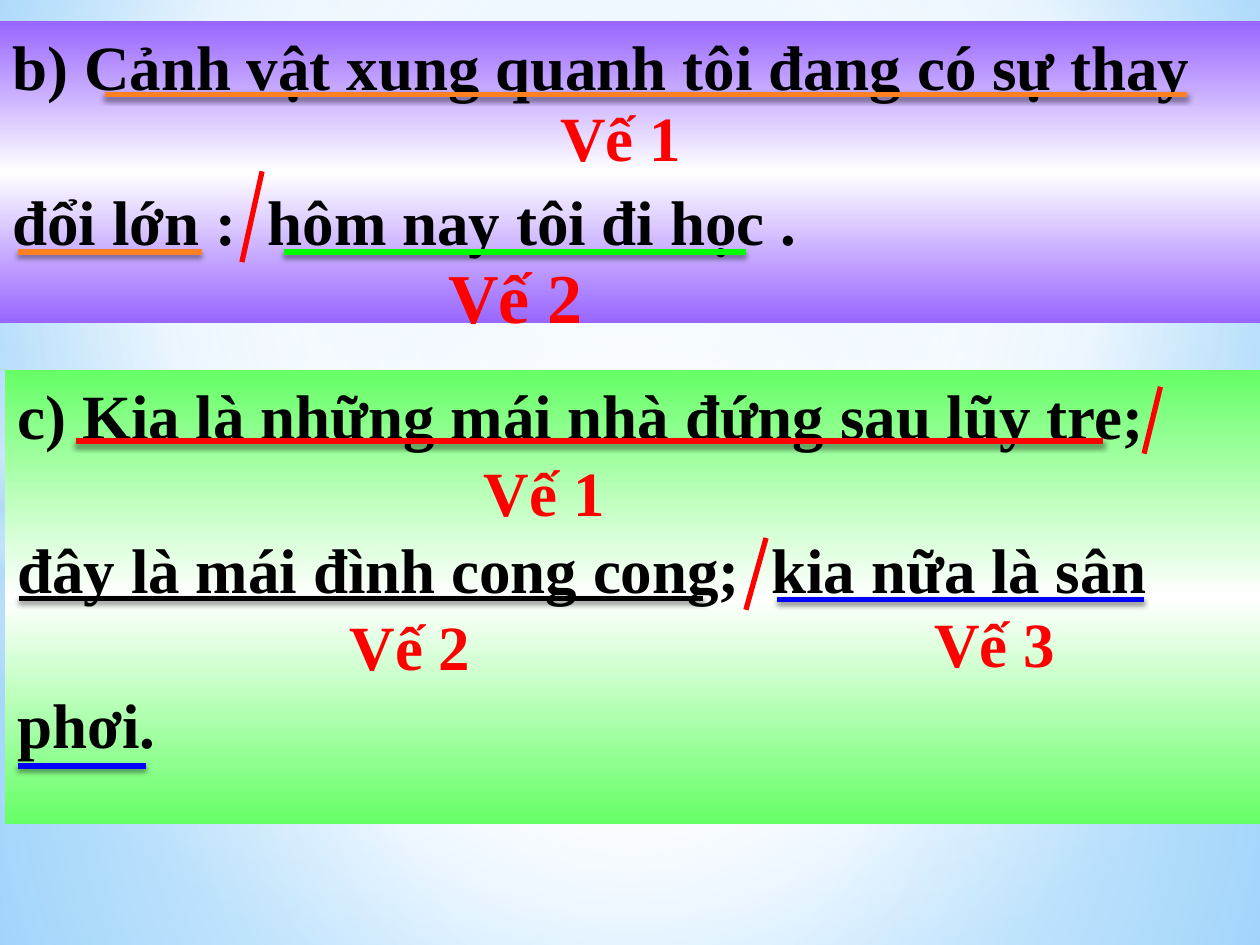
from lxml import etree
from pptx import Presentation
from pptx.dml.color import RGBColor
from pptx.enum.shapes import MSO_CONNECTOR, MSO_SHAPE
from pptx.enum.text import MSO_ANCHOR, PP_ALIGN
from pptx.oxml import parse_xml
from pptx.util import Inches, Pt

RECT, OVAL = MSO_SHAPE.RECTANGLE, MSO_SHAPE.OVAL
STRAIGHT = MSO_CONNECTOR.STRAIGHT
TOP = MSO_ANCHOR.TOP
LEFT, CENTER = PP_ALIGN.LEFT, PP_ALIGN.CENTER

NS = "http://schemas.openxmlformats.org/drawingml/2006/main"
FONT = "Times New Roman"
BLACK = RGBColor(0x00, 0x00, 0x00)
RED = RGBColor(0xFF, 0x00, 0x00)
BLUE = RGBColor(0x00, 0x00, 0xFF)
LIME = RGBColor(0x00, 0xFF, 0x00)
ORANGE = RGBColor(0xFF, 0x80, 0x21)
WHITE = RGBColor(0xFF, 0xFF, 0xFF)
GREEN = RGBColor(0x66, 0xFF, 0x66)
VIOLET = RGBColor(0x99, 0x66, 0xFF)
PALE = RGBColor(0xB4, 0xDC, 0xFA)
SKY = RGBColor(0x9E, 0xD5, 0xFF)
DEEP = RGBColor(0x5B, 0xB9, 0xFF)
MIDDLE = (50, 50, 50, 50)


def make_grad(stops, focus=None):
    """Gradient from (position, colour, opacity) stops: radial with a focus, else downward."""
    marks = "".join(
        f'<a:gs pos="{pos * 1000}"><a:srgbClr val="{color}">'
        f'<a:alpha val="{alpha * 1000}"/></a:srgbClr></a:gs>'
        for pos, color, alpha in stops)
    if focus:
        sides = " ".join(f'{side}="{part * 1000}"' for side, part in zip("ltrb", focus))
        way = f'<a:path path="circle"><a:fillToRect {sides}/></a:path>'
    else:
        way = '<a:lin ang="5400000" scaled="0"/>'
    return parse_xml(f'<a:gradFill xmlns:a="{NS}" rotWithShape="1">'
                     f'<a:gsLst>{marks}</a:gsLst>{way}</a:gradFill>')


def swap_fill(fill, parent, grad):
    fill.solid()
    old = parent.find(f"{{{NS}}}solidFill")
    parent.replace(old, grad)


def add_back(slide):
    fill = slide.background.fill
    fill.solid()
    old = next(slide.element.cSld.iter(f"{{{NS}}}solidFill"))
    stops = [(0, SKY, 100), (60, WHITE, 100), (100, DEEP, 100)]
    old.getparent().replace(old, make_grad(stops, (20, 10, 20, 60)))


def add_panel(slide, kind, box, stops, focus=None):
    panel = slide.shapes.add_shape(kind, *map(Inches, box))
    panel.shadow.inherit = False
    panel.line.fill.background()
    swap_fill(panel.fill, panel._element.spPr, make_grad(stops, focus))
    return panel


def add_text(frame, lines, color, size=36, align=LEFT, gap=0):
    frame.word_wrap = True
    frame.vertical_anchor = TOP
    for index, line in enumerate(lines):
        para = frame.paragraphs[0] if index == 0 else frame.add_paragraph()
        para.alignment = align
        para.space_before = Pt(gap if index else 0)
        run = para.add_run()
        run.text = line
        run.font.name = FONT
        run.font.size = Pt(size)
        run.font.bold = True
        run.font.color.rgb = color


def add_verse(slide, box, color, lines):
    stops = [(0, color, 100), (50, WHITE, 100), (100, color, 100)]
    panel = add_panel(slide, RECT, box, stops)
    add_text(panel.text_frame, lines, BLACK, gap=45)


def add_label(slide, text, box, size=36):
    label = slide.shapes.add_textbox(*map(Inches, box))
    add_text(label.text_frame, [text], RED, size, CENTER)


def add_line(slide, start, end, color, shade=False):
    line = slide.shapes.add_connector(STRAIGHT, *map(Inches, start + end))
    line.line.color.rgb = color
    line.line.width = Pt(3)
    effects = etree.SubElement(line._element.spPr, f"{{{NS}}}effectLst")
    if shade:
        effects.append(parse_xml(
            f'<a:outerShdw xmlns:a="{NS}" blurRad="{Pt(3.1)}" dist="{Pt(1.8)}" '
            'dir="5400000" rotWithShape="0"><a:srgbClr val="000000">'
            '<a:alpha val="45000"/></a:srgbClr></a:outerShdw>'))


def add_glow(slide):
    """Lay the soft light of the backdrop."""
    add_panel(slide, RECT, (0, 4.23, 10, 3.27),
              [(0, WHITE, 91), (37, WHITE, 76), (100, PALE, 79)], MIDDLE)
    add_panel(slide, RECT, (0, 0, 10, 4.23),
              [(0, WHITE, 89), (48, WHITE, 62), (100, PALE, 79)], MIDDLE)
    add_panel(slide, RECT, (0, 2.9, 10, 2.5),
              [(0, WHITE, 0), (29, WHITE, 30), (45, PALE, 40),
               (55, WHITE, 26), (65, PALE, 60), (100, WHITE, 0)])
    add_panel(slide, OVAL, (0, 1.75, 10, 5.58),
              [(0, WHITE, 100), (54, WHITE, 0)], MIDDLE)


def main():
    deck = Presentation()
    deck.slide_width, deck.slide_height = Inches(10), Inches(7.5)
    slide = deck.slides.add_slide(deck.slide_layouts[6])
    add_back(slide)
    add_glow(slide)

    add_verse(slide, (0.04, 2.94, 10, 3.6), GREEN, [
        "c) Kia là những mái nhà đứng sau lũy tre;",
        "đây là mái đình cong cong;  kia nữa là sân",
        "phơi."])
    add_verse(slide, (0, 0.17, 10, 2.39), VIOLET, [
        "b) Cảnh vật xung quanh tôi đang có sự thay",
        "đổi lớn :  hôm nay tôi đi học ."])

    for start, end in [((2.08, 1.36), (1.92, 2.08)),
                       ((9.21, 3.07), (9.08, 3.6)),
                       ((6.08, 4.27), (5.92, 4.84))]:
        add_line(slide, start, end, RED)

    add_label(slide, "Vế 1", (3.92, 0.73, 2.01, 0.71))
    add_label(slide, "Vế 2", (3.15, 1.96, 1.88, 0.77), 40)
    add_label(slide, "Vế 1", (3.52, 3.55, 1.6, 0.71))
    add_label(slide, "Vế 2", (2.35, 4.77, 1.81, 0.71))
    add_label(slide, "Vế 3", (7.04, 4.75, 1.71, 0.71))

    for left, right, top, color in [(0.14, 1.16, 6.08, BLUE),
                                    (0.15, 5.58, 4.75, BLACK),
                                    (6.17, 9.08, 4.76, BLUE),
                                    (0.14, 1.6, 2, ORANGE),
                                    (0.83, 9.42, 0.75, ORANGE),
                                    (2.25, 5.92, 2, LIME),
                                    (0.6, 8.75, 3.5, RED)]:
        add_line(slide, (left, top), (right, top), color, shade=True)

    deck.save("out.pptx")


if __name__ == "__main__":
    main()
